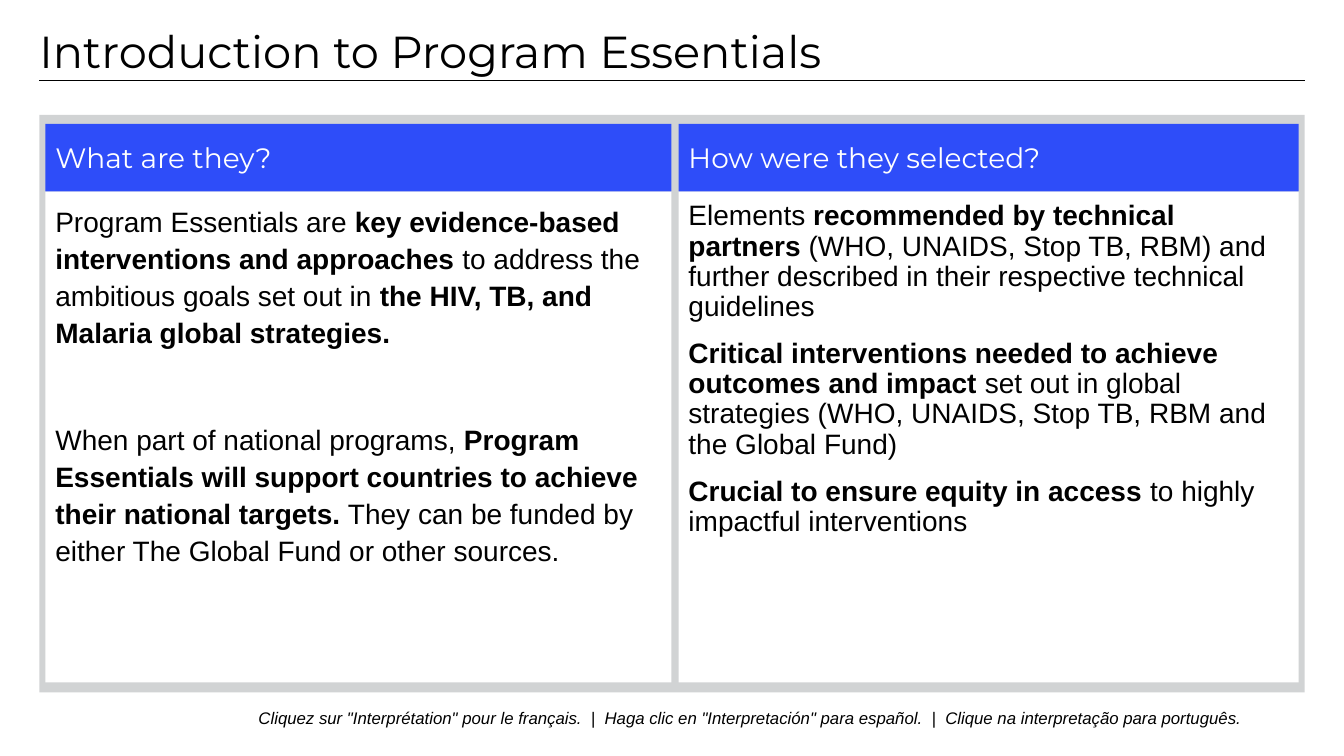
from lxml import etree
from pptx import Presentation
from pptx import util as u
from pptx.dml.color import RGBColor
from pptx.enum import shapes, text
from pptx.oxml.ns import qn

BLACK, WHITE, BLUE, GREY = "000000", "FFFFFF", "2E4DF9", "D1D3D4"
HEAD_FONT, BODY_FONT = "Montserrat", "Arial"

# Grid, in inches
MARGIN, WIDTH = 0.39, 12.55
HEAD_TOP, HEAD_HEIGHT, BODY_HEIGHT = 1.23, 0.67, 4.87

# Columns: left, width, line spacing, gap before later paragraphs, heading,
# paragraphs as (wording, bold) parts
COLUMNS = [
    (0.45, 6.21, 1.1, 38, "What are they?", [
        [("Program Essentials are ", False),
         ("key evidence-based interventions and approaches ", True),
         ("to address the ambitious goals set out in ", False),
         ("the HIV, TB, and Malaria global strategies.", True)],
        [("When part of national programs, ", False),
         ("Program Essentials will support countries to achieve their "
          "national targets.", True),
         (" They can be funded by either The Global Fund or other sources.",
          False)],
    ]),
    (6.73, 6.15, 0.9, 0, "How were they selected?", [
        [("Elements ", False),
         ("recommended by technical partners ", True),
         ("(WHO, UNAIDS, Stop TB, RBM) and further described in their "
          "respective technical guidelines", False)],
        [("Critical interventions needed to achieve outcomes and impact ",
          True),
         ("set out in global strategies (WHO, UNAIDS, Stop TB, RBM and the "
          "Global Fund)", False)],
        [("Crucial to ensure equity in access ", True),
         ("to highly impactful interventions", False)],
    ]),
]
LANGUAGE_NOTE = (
    'Cliquez sur "Interprétation" pour le français.  |  '
    'Haga clic en "Interpretación" para español.  |  '
    'Clique na interpretação para português.')


def color(hex_code):
    return RGBColor.from_string(hex_code)


def style(font, name, size, hex_code, bold=False, italic=False):
    font.name, font.size = name, u.Pt(size)
    font.color.rgb = color(hex_code)
    font.bold, font.italic = bold, italic


def set_frame(frame, anchor, inset_x, inset_y):
    frame.word_wrap = True
    frame.vertical_anchor = anchor
    frame.margin_left = frame.margin_right = u.Inches(inset_x)
    frame.margin_top = frame.margin_bottom = u.Inches(inset_y)


def add_panel(slide, left, top, width, height, fill):
    panel = slide.shapes.add_shape(
        shapes.MSO_SHAPE.RECTANGLE, *map(u.Inches, (left, top, width, height)))
    panel.shadow.inherit = False
    panel.fill.solid()
    panel.fill.fore_color.rgb = color(fill)
    panel.line.fill.background()
    return panel


def add_label(slide, left, top, width, height, wording, anchor, inset=(0, 0)):
    label = slide.shapes.add_textbox(
        *map(u.Inches, (left, top, width, height)))
    set_frame(label.text_frame, anchor, *inset)
    label.text_frame.paragraphs[0].text = wording
    return label.text_frame.paragraphs[0]


def add_rule(slide, left, top, width):
    rule = slide.shapes.add_connector(
        shapes.MSO_CONNECTOR.STRAIGHT,
        *map(u.Inches, (left, top, left + width, top)))
    rule.line.color.rgb = color(BLACK)
    rule.line.width = u.Pt(0.5)
    etree.SubElement(rule._element.spPr, qn("a:effectLst"))


def add_column(slide, left, width, spacing, gap, heading, paragraphs):
    # Body
    body = add_panel(slide, left, HEAD_TOP + HEAD_HEIGHT, width, BODY_HEIGHT,
                     WHITE).text_frame
    set_frame(body, text.MSO_ANCHOR.TOP, 0.1, 0.1)
    for index, parts in enumerate(paragraphs):
        paragraph = body.add_paragraph() if index else body.paragraphs[0]
        paragraph.alignment = text.PP_ALIGN.LEFT
        paragraph.line_spacing = spacing
        paragraph.space_after = u.Pt(12)
        if index and gap:
            paragraph.space_before = u.Pt(gap)
        for wording, bold in parts:
            run = paragraph.add_run()
            run.text = wording
            style(run.font, BODY_FONT, 20, BLACK, bold)

    # Heading band
    band = add_panel(slide, left, HEAD_TOP, width, HEAD_HEIGHT,
                     BLUE).text_frame
    set_frame(band, text.MSO_ANCHOR.MIDDLE, 0.1, 0.05)
    band.text = heading
    band.paragraphs[0].alignment = text.PP_ALIGN.LEFT
    style(band.paragraphs[0].runs[0].font, HEAD_FONT, 20, WHITE)


def main():
    deck = Presentation()
    deck.slide_width, deck.slide_height = u.Inches(13.33), u.Inches(7.5)
    slide = deck.slides.add_slide(deck.slide_layouts[6])

    # Language note at the foot
    note = add_label(slide, 2.17, 6.97, 10.55, 0.3, LANGUAGE_NOTE,
                     text.MSO_ANCHOR.BOTTOM, (0.1, 0.05))
    note.alignment = text.PP_ALIGN.CENTER
    style(note.runs[0].font, BODY_FONT, 12, BLACK, italic=True)

    # Title with its rule
    add_rule(slide, MARGIN, 0.8, WIDTH)
    title = add_label(slide, MARGIN, 0.3, WIDTH, 0.51,
                      "Introduction to Program Essentials",
                      text.MSO_ANCHOR.TOP)
    title.line_spacing = 0.9
    style(title.runs[0].font, HEAD_FONT, 32, BLACK)

    # Two columns on a grey frame
    add_panel(slide, MARGIN, 1.14, WIDTH, 5.73, GREY)
    for column in COLUMNS:
        add_column(slide, *column)

    deck.save("out.pptx")


if __name__ == "__main__":
    main()
